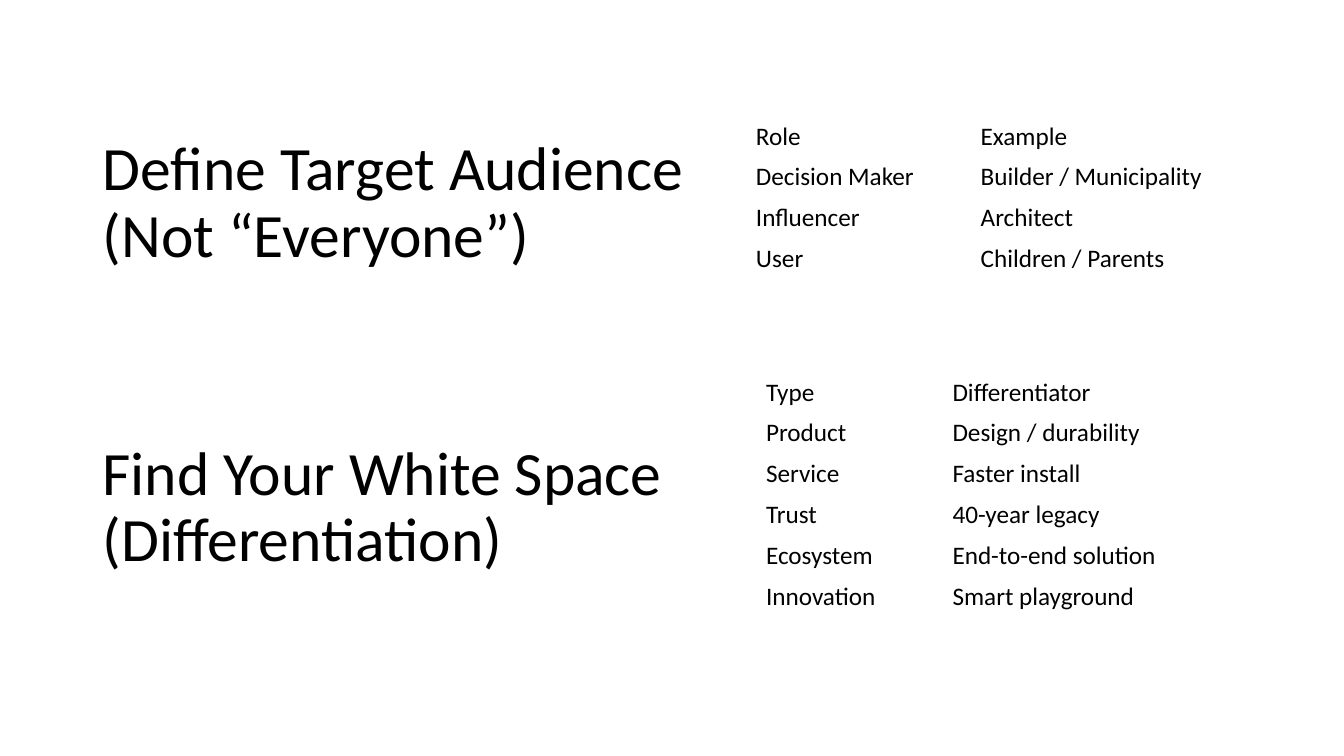
from pptx import Presentation
from pptx.dml.color import RGBColor
from pptx.enum.text import MSO_ANCHOR, MSO_AUTO_SIZE, PP_ALIGN
from pptx.util import Pt

MIDDLE = MSO_ANCHOR.MIDDLE
NO_AUTOSIZE = MSO_AUTO_SIZE.NONE
LEFT = PP_ALIGN.LEFT
TITLE_ONLY = 5
FONT = "Calibri"
BLACK = "000000"
HEADING_LEFT = 66.2
ROW_HEIGHT = 28.8

AUDIENCE = [
    ("Role", "Example"),
    ("Decision Maker", "Builder / Municipality"),
    ("Influencer", "Architect"),
    ("User", "Children / Parents"),
]
DIFFERENTIATORS = [
    ("Type", "Differentiator"),
    ("Product", "Design / durability"),
    ("Service", "Faster install"),
    ("Trust", "40-year legacy"),
    ("Ecosystem", "End-to-end solution"),
    ("Innovation", "Smart playground"),
]


def color(value):
    """Turn a hex string into a colour."""
    return RGBColor.from_string(value)


def write_text(frame, text, size=18, line_spacing=1.0):
    """Write one formatted paragraph into a text frame."""
    frame.word_wrap = True
    paragraph = frame.paragraphs[0]
    paragraph.text = text
    paragraph.alignment = LEFT
    paragraph.line_spacing = line_spacing
    paragraph.font.name = FONT
    paragraph.font.size = Pt(size)
    paragraph.font.bold = False
    paragraph.font.color.rgb = color(BLACK)


def format_heading(shape, text, left, top, width, height):
    """Place a heading shape in its box and write its text."""
    shape.left, shape.top = Pt(left), Pt(top)
    shape.width, shape.height = Pt(width), Pt(height)
    frame = shape.text_frame
    frame.auto_size = NO_AUTOSIZE
    frame.vertical_anchor = MIDDLE
    write_text(frame, text, size=44, line_spacing=0.9)


def add_plain_table(slide, rows, left, top, column_widths):
    """Add a table without fills or banding."""
    table = slide.shapes.add_table(
        len(rows), len(column_widths), Pt(left), Pt(top),
        Pt(sum(column_widths)), Pt(ROW_HEIGHT * len(rows)),
    ).table
    table.first_row = False
    table.horz_banding = False
    for column, width in zip(table.columns, column_widths):
        column.width = Pt(width)
    for row, texts in zip(table.rows, rows):
        for cell, text in zip(row.cells, texts):
            cell.fill.background()
            cell.vertical_anchor = MIDDLE
            write_text(cell.text_frame, text)


def build_strategy_slide(presentation):
    """Build the slide with two headings and their tables."""
    slide = presentation.slides.add_slide(presentation.slide_layouts[TITLE_ONLY])
    format_heading(slide.shapes.title, "Define Target Audience (Not “Everyone”)",
                   HEADING_LEFT, 93.6, 435.6, 104.4)
    add_plain_table(slide, AUDIENCE, 532.8, 82.8, (160.5, 203.5))
    add_plain_table(slide, DIFFERENTIATORS, 540, 265.7, (133.2, 229.7))
    differentiation = slide.shapes.add_textbox(0, 0, 0, 0)
    format_heading(differentiation, "Find Your White Space (Differentiation)",
                   HEADING_LEFT, 311, 424.8, 104.4)


def main():
    """Create and save the presentation."""
    presentation = Presentation()
    presentation.slide_width, presentation.slide_height = Pt(960), Pt(540)
    build_strategy_slide(presentation)
    presentation.save("out.pptx")


if __name__ == "__main__":
    main()
